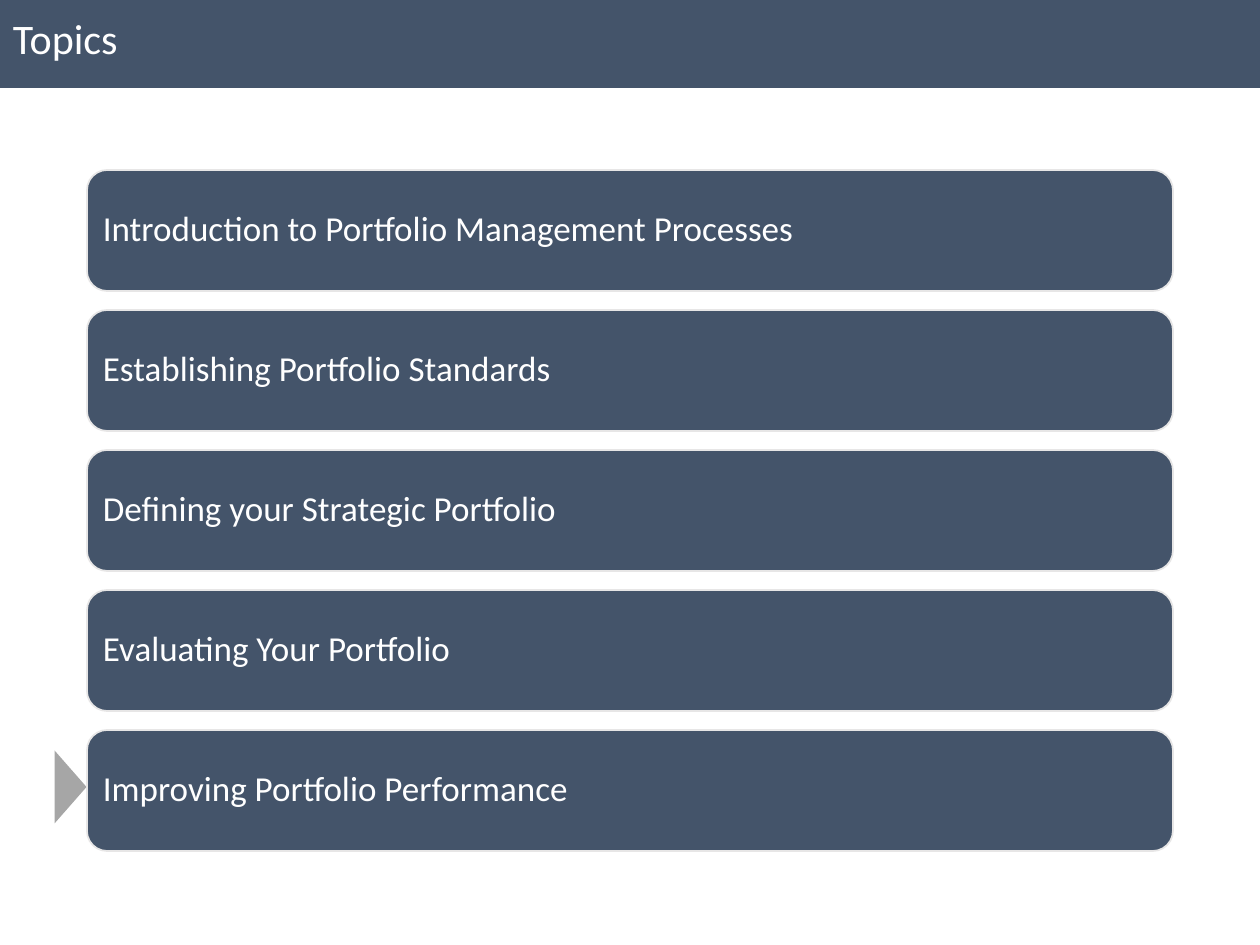
from pptx import Presentation
from pptx.dml.color import RGBColor
from pptx.enum.shapes import MSO_SHAPE as Shape
from pptx.enum.text import MSO_ANCHOR as Anchor, PP_ALIGN as Align
from pptx.util import Pt

EMU_PER_PX = 914400 / 126
SLATE = RGBColor(0x44, 0x54, 0x6A)
PALE = RGBColor(0xE7, 0xE6, 0xE6)
GREY = RGBColor(0xA6, 0xA6, 0xA6)
WHITE = RGBColor(0xFF, 0xFF, 0xFF)

TOPICS = [
    "Introduction to Portfolio Management Processes",
    "Establishing Portfolio Standards",
    "Defining your Strategic Portfolio",
    "Evaluating Your Portfolio",
    "Improving Portfolio Performance",
]
FIRST_TOP, TOPIC_STEP = 170, 140


def px(length):
    return round(length * EMU_PER_PX)


class TopicSlide:
    font_name = "Calibri"

    def __init__(self, slide):
        self.slide = slide

    def block(self, kind, left, top, width, height, fill):
        block = self.slide.shapes.add_shape(kind, px(left), px(top), px(width), px(height))
        block.shadow.inherit = False
        block.fill.solid()
        block.fill.fore_color.rgb = fill
        block.line.fill.background()
        return block

    def label(self, block, words, size, inset, anchor):
        frame = block.text_frame
        frame.text = words
        frame.word_wrap = True
        frame.vertical_anchor = anchor
        frame.margin_left = frame.margin_right = px(inset)
        frame.margin_top = frame.margin_bottom = px(inset)
        paragraph = frame.paragraphs[0]
        paragraph.alignment = Align.LEFT
        for run in paragraph.runs:
            run.font.name = self.font_name
            run.font.size = Pt(size)
            run.font.color.rgb = WHITE
        return paragraph

    def header(self, words):
        band = self.block(Shape.RECTANGLE, 0, 0, 1260, 88, SLATE)
        self.label(band, words, 24, 13, Anchor.TOP)

    def marker(self):
        pointer = self.block(Shape.ISOSCELES_TRIANGLE, 34, 771, 73, 32, GREY)
        pointer.rotation = 90

    def topic(self, words, top):
        bar = self.block(Shape.ROUNDED_RECTANGLE, 87, top, 1086, 121, SLATE)
        bar.line.color.rgb = PALE
        bar.line.width = Pt(1)
        paragraph = self.label(bar, words, 20, 10, Anchor.MIDDLE)
        paragraph.line_spacing = 0.9


def main():
    deck = Presentation()
    deck.slide_width, deck.slide_height = px(1260), px(945)
    page = TopicSlide(deck.slides.add_slide(deck.slide_layouts[6]))
    page.header("Topics")
    page.marker()
    for row, words in enumerate(TOPICS):
        page.topic(words, FIRST_TOP + row * TOPIC_STEP)
    deck.save("out.pptx")


if __name__ == "__main__":
    main()
